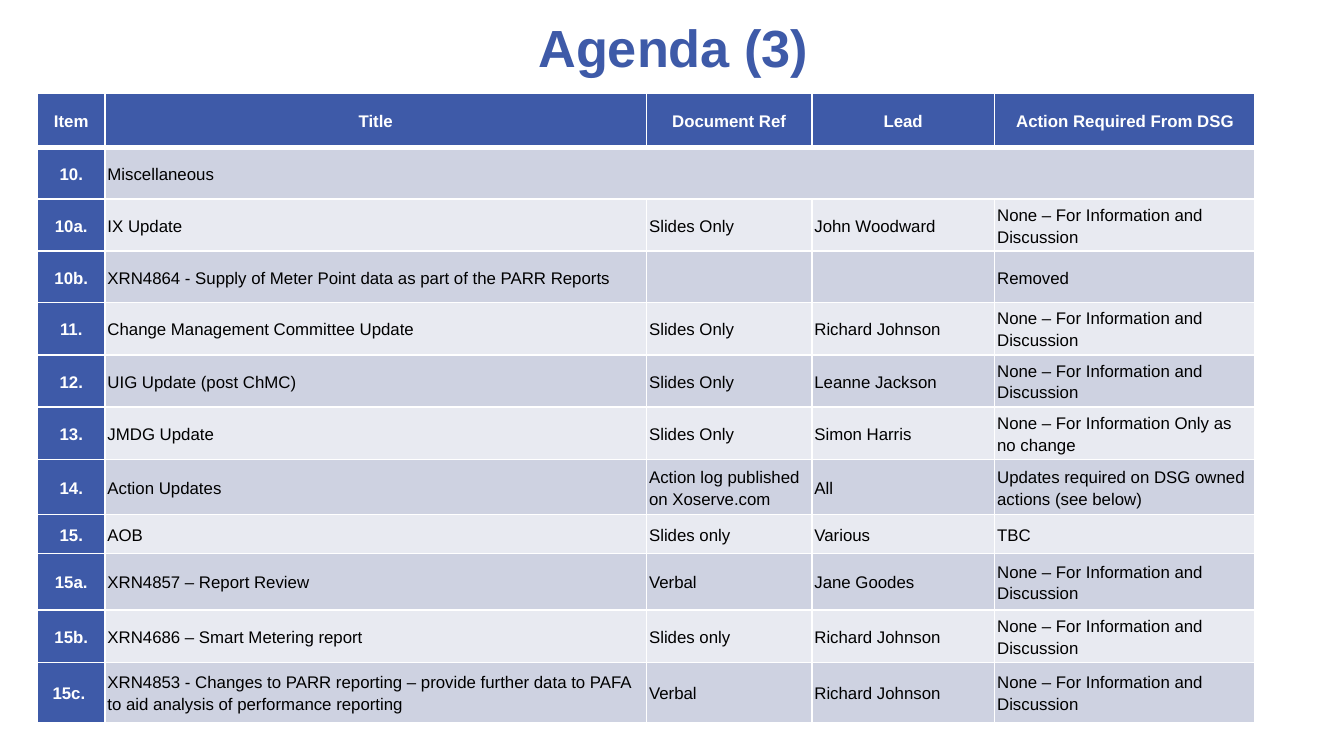
"""Build the third agenda slide with its table of items."""
from dataclasses import dataclass

from lxml import etree
from pptx import Presentation
from pptx.dml.color import RGBColor
from pptx.enum.text import MSO_ANCHOR, PP_ALIGN
from pptx.oxml.ns import qn
from pptx.slide import Slide
from pptx.table import Table, _Cell
from pptx.text.text import TextFrame
from pptx.util import Inches, Pt

LEFT, CENTER = PP_ALIGN.LEFT, PP_ALIGN.CENTER
MIDDLE = MSO_ANCHOR.MIDDLE
BLUE = RGBColor(0x3E, 0x5A, 0xA8)
DARK = RGBColor(0xCE, 0xD2, 0xE1)
PALE = RGBColor(0xE8, 0xEA, 0xF1)
WHITE = RGBColor(0xFF, 0xFF, 0xFF)
BLACK = RGBColor(0, 0, 0)
FONT = "Arial"
WIDTHS = (0.5, 4.03, 1.23, 1.36, 1.94)
INFORM = "None – For Information and Discussion"


@dataclass(frozen=True)
class Item:
    height: float
    number: str
    title: str
    ref: str = ""
    lead: str = ""
    action: str = ""

    def texts(self) -> tuple[str, ...]:
        return self.number, self.title, self.ref, self.lead, self.action


ITEMS = (
    Item(0.41, "Item", "Title", "Document Ref", "Lead", "Action Required From DSG"),
    Item(0.38, "10.", "Miscellaneous"),
    Item(0.39, "10a.", "IX Update", "Slides Only", "John Woodward", INFORM),
    Item(0.38, "10b.", "XRN4864 - Supply of Meter Point data as part of the PARR Reports",
         action="Removed"),
    Item(0.39, "11.", "Change Management Committee Update", "Slides Only",
         "Richard Johnson", INFORM),
    Item(0.39, "12.", "UIG Update (post ChMC)", "Slides Only", "Leanne Jackson", INFORM),
    Item(0.39, "13.", "JMDG Update", "Slides Only", "Simon Harris",
         "None – For Information Only as no change"),
    Item(0.41, "14.", "Action Updates", "Action log published on Xoserve.com", "All",
         "Updates required on DSG owned actions (see below)"),
    Item(0.29, "15.", "AOB", "Slides only", "Various", "TBC"),
    Item(0.42, "15a.", "XRN4857 – Report Review", "Verbal", "Jane Goodes", INFORM),
    Item(0.39, "15b.", "XRN4686 – Smart Metering report", "Slides only",
         "Richard Johnson", INFORM),
    Item(0.45, "15c. ", "XRN4853 - Changes to PARR reporting – provide further data to PAFA "
         "to aid analysis of performance reporting", "Verbal", "Richard Johnson", INFORM),
)


def write(frame: TextFrame, text: str, size: float, color: RGBColor,
          bold: bool, align: PP_ALIGN) -> None:
    frame.text = text
    for para in frame.paragraphs:
        para.alignment = align
        for run in para.runs:
            run.font.name = FONT
            run.font.size = Pt(size)
            run.font.bold = bold
            run.font.color.rgb = color


def edge(cell: _Cell, side: str, width: float) -> None:
    props = cell._tc.get_or_add_tcPr()
    line = etree.SubElement(props, qn(f"a:ln{side}"), w=str(Pt(width)))
    fill = etree.SubElement(line, qn("a:solidFill"))
    etree.SubElement(fill, qn("a:srgbClr"), val=str(WHITE))


def style(cell: _Cell, text: str, row: int, col: int) -> None:
    head = row == 0 or col == 0
    cell.margin_left = cell.margin_right = Inches(0.02)
    cell.margin_top = cell.margin_bottom = 0
    cell.vertical_anchor = MIDDLE
    thick = {(0, "B"): 3, (1, "T"): 3}
    for side in "LRTB":
        edge(cell, side, thick.get((row, side), 1))
    cell.fill.solid()
    cell.fill.fore_color.rgb = BLUE if head else DARK if row % 2 else PALE
    write(cell.text_frame, text, 9, WHITE if head else BLACK, head,
          CENTER if head else LEFT)
    cell.text_frame.paragraphs[0].line_spacing = 1.15


def fill_table(table: Table) -> None:
    for column, width in zip(table.columns, WIDTHS):
        column.width = Inches(width)
    for row, item in enumerate(ITEMS):
        table.rows[row].height = Inches(item.height)
        for col, text in enumerate(item.texts()):
            style(table.cell(row, col), text, row, col)
    table.cell(1, 1).merge(table.cell(1, 4))


def add_title(slide: Slide) -> None:
    title = slide.shapes.title
    title.left, title.top = Inches(0.51), Inches(0)
    title.width, title.height = Inches(9), Inches(0.7)
    title.text_frame.vertical_anchor = MIDDLE
    write(title.text_frame, "Agenda (3)", 28, BLUE, True, CENTER)


def main() -> None:
    deck = Presentation()
    deck.slide_width = Inches(10)
    deck.slide_height = deck.slide_width * 9 // 16
    slide = deck.slides.add_slide(deck.slide_layouts[5])
    add_title(slide)
    height = sum(item.height for item in ITEMS)
    frame = slide.shapes.add_table(len(ITEMS), len(WIDTHS), Inches(0.28), Inches(0.69),
                                   Inches(sum(WIDTHS)), Inches(height))
    fill_table(frame.table)
    deck.save("out.pptx")


if __name__ == "__main__":
    main()
